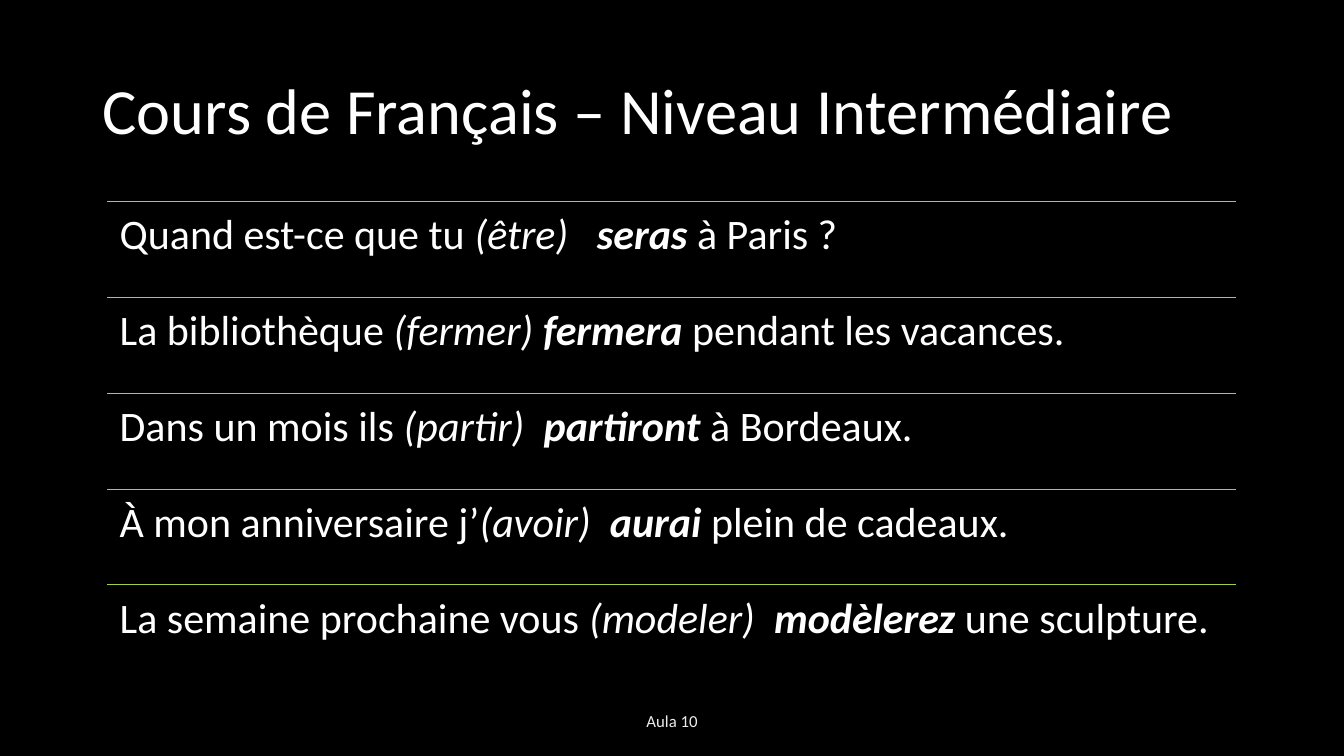
from dataclasses import dataclass

from lxml.etree import SubElement
from pptx import Presentation
from pptx.dml.color import RGBColor
from pptx.enum.shapes import MSO_CONNECTOR
from pptx.enum.text import MSO_ANCHOR, PP_ALIGN
from pptx.oxml.ns import qn
from pptx.util import Inches, Pt


@dataclass(frozen=True)
class Theme:
    """Colours, font and type sizes of the slide."""
    background: str = "000000"
    text: str = "FFFFFF"
    footer: str = "EDEDED"
    rule: str = "A2CF49"
    font: str = "Calibri"
    title_size: int = 46
    sentence_size: int = 30
    footer_size: int = 12
    rule_width: float = 0.5


THEME = Theme()
WIDTH, HEIGHT = Inches(13.33), Inches(7.5)
LEFT, SPAN = 8, 84
FIRST_ROW, ROW_STEP = 26.67, 12.67

SENTENCES = [
    ("Quand est-ce que tu ", "(être)  ", " seras ", "à Paris ?"),
    ("La bibliothèque ", "(fermer) ", "fermera", " pendant les vacances."),
    ("Dans un mois ils ", "(partir)  ", "partiront", " à Bordeaux."),
    ("À mon anniversaire j’", "(avoir)  ", "aurai ", "plein de cadeaux."),
    ("La semaine prochaine vous ", "(modeler)  ", "modèlerez ", "une sculpture."),
]
STYLES = [(False, False), (False, True), (True, True), (False, False)]


def across(share):
    """Turn a percentage of the slide width into a length."""
    return round(WIDTH * share / 100)


def down(share):
    """Turn a percentage of the slide height into a length."""
    return round(HEIGHT * share / 100)


def add_text(s, box, runs, size, color=THEME.text, anchor=MSO_ANCHOR.MIDDLE,
             align=PP_ALIGN.LEFT, spacing=0.9, inset=None):
    """Add a one-paragraph text box from (text, bold, italic) runs."""
    left, top, width, height = box
    sp = s.shapes.add_textbox(across(left), down(top), across(width), down(height))
    tf = sp.text_frame
    tf.word_wrap = True
    tf.vertical_anchor = anchor
    if inset is not None:
        tf.margin_left = tf.margin_right = tf.margin_top = tf.margin_bottom = inset
    p = tf.paragraphs[0]
    p.alignment = align
    p.line_spacing = spacing
    for text, bold, italic in runs:
        r = p.add_run()
        r.text = text
        r.font.name = THEME.font
        r.font.size = Pt(size)
        r.font.bold = bold
        r.font.italic = italic
        r.font.color.rgb = RGBColor.from_string(color)


def add_rule(s, top):
    """Add a thin horizontal rule across the sentence column."""
    y = down(top)
    line = s.shapes.add_connector(MSO_CONNECTOR.STRAIGHT, across(LEFT), y,
                                  across(LEFT + SPAN), y)
    line.line.color.rgb = RGBColor.from_string(THEME.rule)
    line.line.width = Pt(THEME.rule_width)
    SubElement(line._element.spPr, qn("a:effectLst"))


def add_sentence(s, row, parts):
    """Add one ruled sentence with its infinitive and answer."""
    top = FIRST_ROW + row * ROW_STEP
    add_rule(s, top)
    runs = [(text, *style) for text, style in zip(parts, STYLES)]
    add_text(s, (LEFT, top, SPAN, ROW_STEP), runs, THEME.sentence_size,
             anchor=MSO_ANCHOR.TOP, inset=Inches(0.12))


def main():
    """Build the lesson slide and save it."""
    prs = Presentation()
    prs.slide_width, prs.slide_height = WIDTH, HEIGHT
    s = prs.slides.add_slide(prs.slide_layouts[6])
    fill = s.background.fill
    fill.solid()
    fill.fore_color.rgb = RGBColor.from_string(THEME.background)
    add_text(s, (6.9, 5.33, 86.25, 19.33),
             [("Cours de Français – Niveau Intermédiaire", False, False)],
             THEME.title_size)
    for row, parts in enumerate(SENTENCES):
        add_sentence(s, row, parts)
    add_text(s, (33.13, 92.67, 33.75, 5.33), [("Aula 10", False, False)],
             THEME.footer_size, THEME.footer, align=PP_ALIGN.CENTER, spacing=1.0)
    prs.save("out.pptx")


if __name__ == "__main__":
    main()
